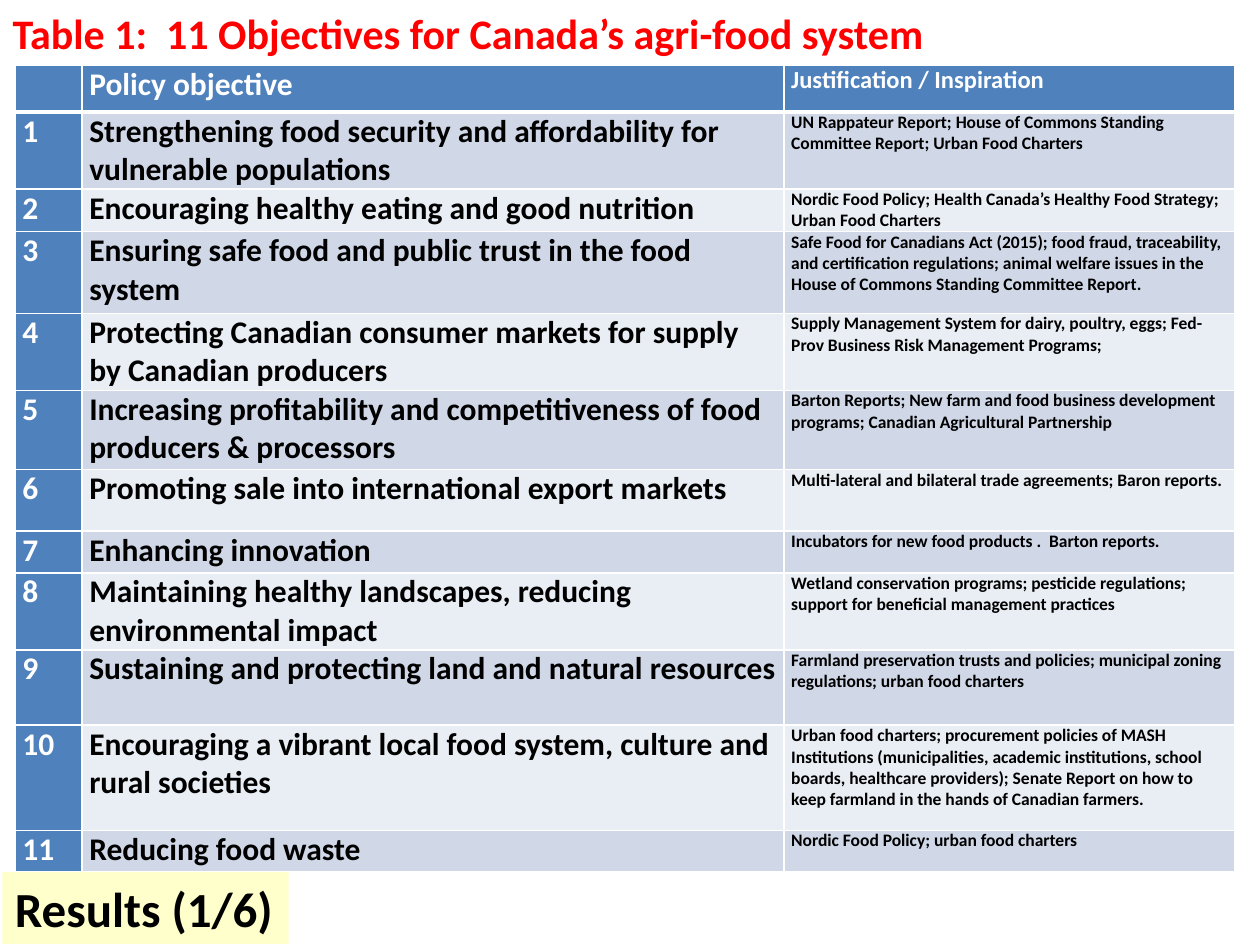
from pptx import Presentation
from pptx.dml.color import RGBColor
from pptx.enum.shapes import MSO_SHAPE
from pptx.enum.text import MSO_ANCHOR, MSO_AUTO_SIZE, PP_ALIGN
from pptx.oxml import parse_xml
from pptx.oxml.ns import nsdecls
from pptx.util import Cm, Pt

BLUE, WHITE, BLACK = "4F81BD", "FFFFFF", "000000"
BANDS = ["E9EDF4", "D0D8E8"]


def write(frame, text, size, color):
    """Set bold, left-aligned text in a frame."""
    frame.text = text
    par = frame.paragraphs[0]
    par.alignment = PP_ALIGN.LEFT
    font = par.runs[0].font
    font.name, font.size, font.bold = "Calibri", Pt(size), True
    font.color.rgb = RGBColor.from_string(color)


def edge(cell, side, width):
    """Draw a white border on one side (L, R, T or B) of a cell."""
    cell._tc.get_or_add_tcPr().append(parse_xml(
        f'<a:ln{side} {nsdecls("a")} w="{Pt(width)}"><a:solidFill>'
        f'<a:srgbClr val="{WHITE}"/></a:solidFill></a:ln{side}>'))


# Row height in cm, objective, justification
rows = [
    (0.94, "Policy objective", "Justification / Inspiration"),
    (1.52, "Strengthening food security and affordability for vulnerable populations",
     "UN Rappateur Report; House of Commons Standing Committee Report; Urban Food Charters"),
    (0.84, "Encouraging healthy eating and good nutrition",
     "Nordic Food Policy; Health Canada’s Healthy Food Strategy; Urban Food Charters"),
    (1.65, "Ensuring safe food and public trust in the food system",
     "Safe Food for Canadians Act (2015); food fraud, traceability, and certification "
     "regulations; animal welfare issues in the House of Commons Standing Committee Report."),
    (1.52, "Protecting Canadian consumer markets for supply by Canadian producers",
     "Supply Management System for dairy, poultry, eggs; "
     "Fed-Prov Business Risk Management Programs;"),
    (1.6, "Increasing profitability and competitiveness of food producers & processors",
     "Barton Reports; New farm and food business development programs; "
     "Canadian Agricultural Partnership"),
    (1.24, "Promoting sale into international export markets",
     "Multi-lateral and bilateral trade agreements; Baron reports."),
    (0.84, "Enhancing innovation",
     "Incubators for new food products .  Barton reports."),
    (1.52, "Maintaining healthy landscapes, reducing environmental impact",
     "Wetland conservation programs; pesticide regulations; "
     "support for beneficial management practices"),
    (1.52, "Sustaining and protecting land and natural resources",
     "Farmland preservation trusts and policies; municipal zoning regulations; "
     "urban food charters"),
    (2.12, "Encouraging a vibrant local food system, culture and rural societies",
     "Urban food charters; procurement policies of MASH Institutions (municipalities, "
     "academic institutions, school boards, healthcare providers); Senate Report on how "
     "to keep farmland in the hands of Canadian farmers."),
    (0.84, "Reducing food waste", "Nordic Food Policy; urban food charters"),
]
widths = [1.35, 14.15, 9.1]

deck = Presentation()
deck.slide_width, deck.slide_height = Cm(25.4), Cm(19.05)
slide = deck.slides.add_slide(deck.slide_layouts[5])

title = slide.shapes.title
title.left, title.top, title.width, title.height = Cm(0), Cm(0.03), Cm(19.08), Cm(2.31)
frame = title.text_frame
frame.word_wrap = False
frame.auto_size = MSO_AUTO_SIZE.NONE
frame.vertical_anchor = MSO_ANCHOR.TOP
write(frame, "Table 1:  11 Objectives for Canada’s agri-food system", 24, "FF0000")

high = sum(row[0] for row in rows)
table = slide.shapes.add_table(len(rows), len(widths), Cm(0.3), Cm(1.32),
                               Cm(sum(widths)), Cm(high)).table
table.first_col = True
for col, width in zip(table.columns, widths):
    col.width = Cm(width)

for r, (height, goal, basis) in enumerate(rows):
    table.rows[r].height = Cm(height)
    for c, text in enumerate([str(r) if r else "", goal, basis]):
        cell = table.cell(r, c)
        cell.margin_left = cell.margin_right = Cm(0.15)
        cell.margin_top = cell.margin_bottom = 0
        head = r == 0 or c == 0
        if text:
            size = 18 if c < 2 else 10 if r else 14
            write(cell.text_frame, text, size, WHITE if head else BLACK)
        for side in "LRTB":
            thick = (r, side) in [(0, "B"), (1, "T")]
            edge(cell, side, 3 if thick else 1)
        cell.fill.solid()
        cell.fill.fore_color.rgb = RGBColor.from_string(BLUE if head else BANDS[r % 2])

label = slide.shapes.add_shape(MSO_SHAPE.RECTANGLE, Cm(0.05), Cm(17.58), Cm(5.77), Cm(1.45))
label.shadow.inherit = False
label.fill.solid()
label.fill.fore_color.rgb = RGBColor.from_string("FFFFCC")
label.line.fill.background()
label.text_frame.word_wrap = False
write(label.text_frame, "Results (1/6)", 28, BLACK)

deck.save("out.pptx")
